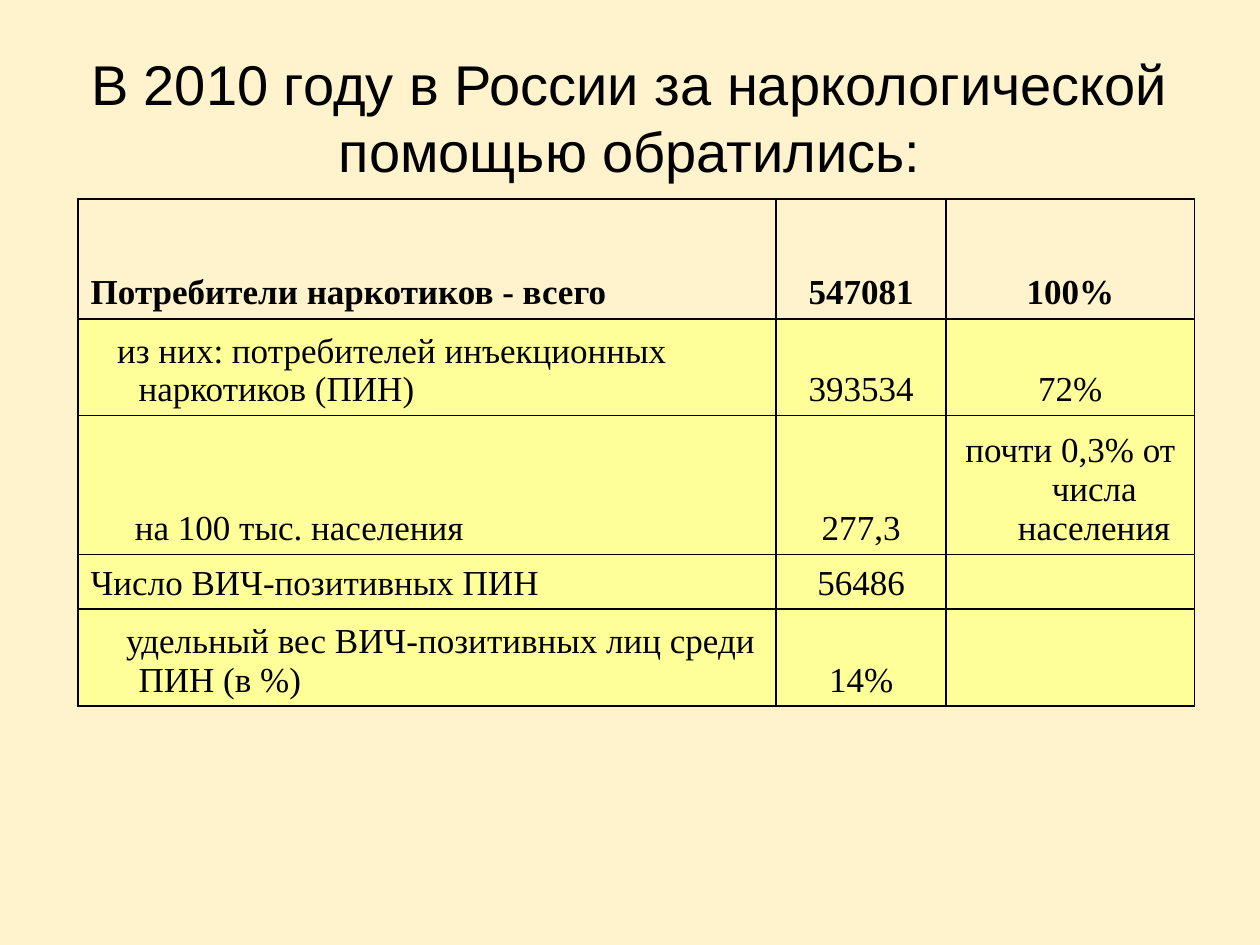
from lxml import etree
from pptx import Presentation
from pptx.dml.color import RGBColor
from pptx.enum.text import MSO_ANCHOR, PP_ALIGN
from pptx.oxml.ns import qn
from pptx.util import Inches, Pt

LEFT, CENTER = PP_ALIGN.LEFT, PP_ALIGN.CENTER
MIDDLE, BOTTOM = MSO_ANCHOR.MIDDLE, MSO_ANCHOR.BOTTOM

COLORS = {"background": "FFF3CD", "text": "000000", "border": "000000", "body": "FFFF99"}
TITLE = "В 2010 году в России за наркологической помощью обратились:"
COLUMN_WIDTHS = [5.54, 1.35, 1.97]
HANGING = 0.38
ROWS = [
    (0.95, 0, ["Потребители наркотиков - всего", "547081", "100%"]),
    (0.77, 0.21, ["из них: потребителей инъекционных наркотиков (ПИН)", "393534", "72%"]),
    (1.02, 0.35, ["на 100 тыс. населения", "277,3", "почти 0,3% от числа населения"]),
    (0.43, 0, ["Число ВИЧ-позитивных ПИН", "56486", ""]),
    (0.77, 0.28, ["удельный вес ВИЧ-позитивных лиц среди ПИН (в %)", "14%", ""]),
]


def color(name):
    return RGBColor.from_string(COLORS[name])


def write_text(frame, text, font_name, size, alignment, bold=False):
    paragraph = frame.paragraphs[0]
    paragraph.text = text
    paragraph.alignment = alignment
    font = paragraph.font
    font.name, font.size, font.bold = font_name, Pt(size), bold
    font.color.rgb = color("text")
    return paragraph


def add_title(page):
    box = page.shapes.add_textbox(Inches(0.5), Inches(0.3), Inches(9), Inches(1.25))
    frame = box.text_frame
    frame.word_wrap = True
    frame.vertical_anchor = MIDDLE
    write_text(frame, TITLE, "Arial", 32, CENTER)


def add_borders(cell):
    properties = cell._tc.get_or_add_tcPr()
    for side in ("lnL", "lnR", "lnT", "lnB"):
        line = etree.SubElement(properties, qn(f"a:{side}"), w=str(Pt(1)))
        fill = etree.SubElement(line, qn("a:solidFill"))
        etree.SubElement(fill, qn("a:srgbClr"), val=COLORS["border"])


def fill_cell(cell, text, alignment, first_line, is_total):
    cell.vertical_anchor = BOTTOM
    add_borders(cell)
    if is_total:
        cell.fill.background()
    else:
        cell.fill.solid()
        cell.fill.fore_color.rgb = color("body")
    paragraph = write_text(cell.text_frame, text, "Times New Roman", 20, alignment, is_total)
    indents = paragraph._p.get_or_add_pPr()
    indents.set("marL", str(Inches(HANGING)))
    indents.set("indent", str(Inches(first_line - HANGING)))


def add_statistics(page):
    height = sum(row[0] for row in ROWS)
    table = page.shapes.add_table(
        len(ROWS), len(COLUMN_WIDTHS), Inches(0.62), Inches(1.58),
        Inches(sum(COLUMN_WIDTHS)), Inches(height)).table
    table.first_row = table.horz_banding = False
    for column, width in zip(table.columns, COLUMN_WIDTHS):
        column.width = Inches(width)
    for r, (row_height, label_start, texts) in enumerate(ROWS):
        table.rows[r].height = Inches(row_height)
        for c, text in enumerate(texts):
            is_label = c == 0
            fill_cell(table.cell(r, c), text, LEFT if is_label else CENTER,
                      label_start if is_label else 0, r == 0)


def main():
    deck = Presentation()
    deck.slide_width, deck.slide_height = Inches(10), Inches(7.5)
    page = deck.slides.add_slide(deck.slide_layouts[6])
    page.background.fill.solid()
    page.background.fill.fore_color.rgb = color("background")
    add_title(page)
    add_statistics(page)
    deck.save("out.pptx")


if __name__ == "__main__":
    main()
